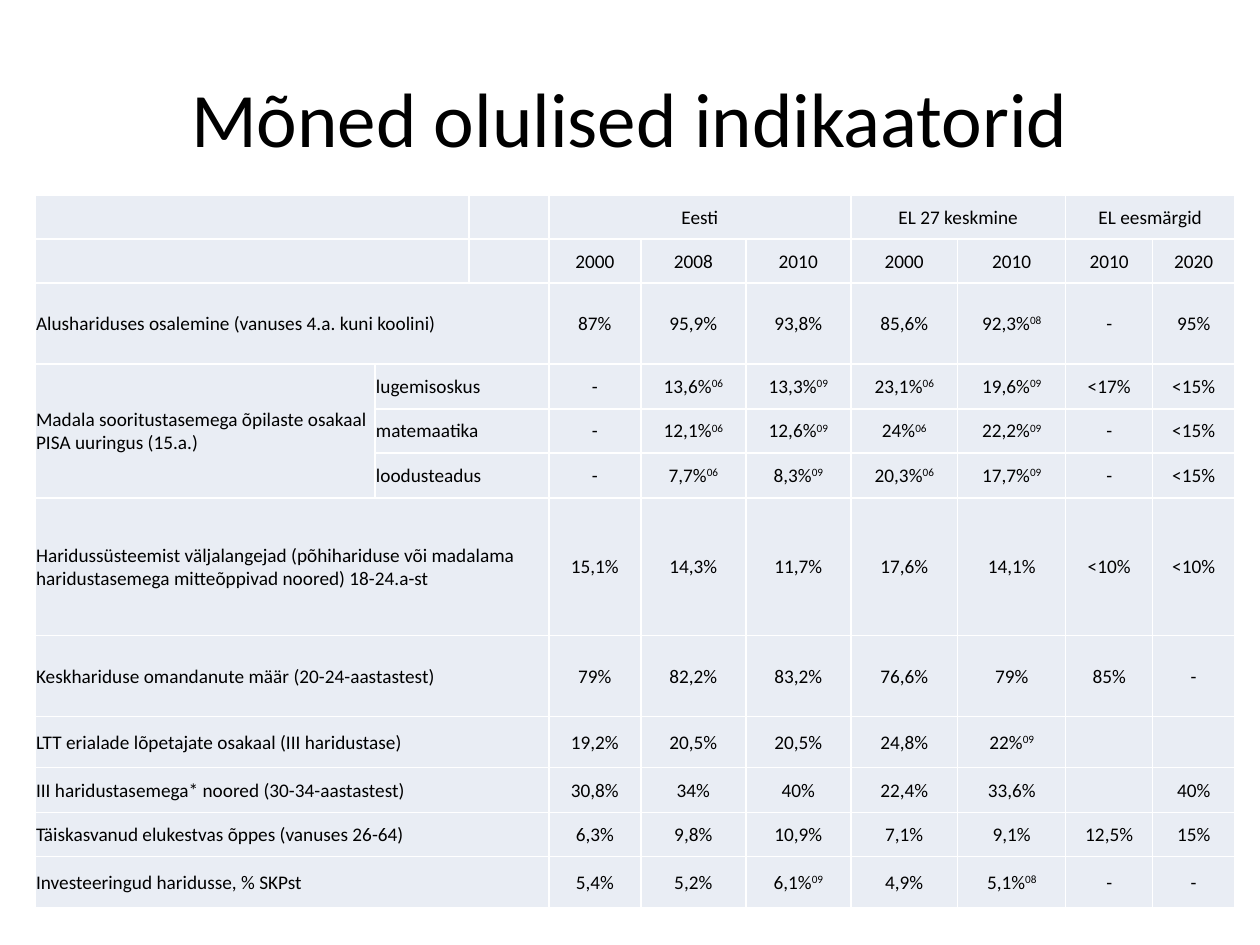
from dataclasses import dataclass

from lxml.etree import SubElement
from pptx import Presentation
from pptx.dml.color import RGBColor
from pptx.enum.text import MSO_ANCHOR, PP_ALIGN
from pptx.oxml.ns import qn
from pptx.util import Emu, Pt


@dataclass(frozen=True)
class Theme:
    face: str = "Calibri"
    ink: str = "000000"
    cell: str = "E9EDF4"
    rule: str = "FFFFFF"
    title: int = 44
    body: int = 11
    edge: int = 1


THEME = Theme()
SCALE = 914400 / 126
COLS = [340, 94, 80, 92, 105, 105, 107, 108, 87, 82]
ROWS = [44, 44, 81, 45, 44, 45, 138, 81, 51, 45, 44, 51]
FLAGS = {"first_row": False, "horz_banding": False}
INSETS = ["margin_left", "margin_right", "margin_top"]

HEADS = {3: "Eesti", 6: "EL 27 keskmine", 8: "EL eesmärgid"}
PISA = "Madala sooritustasemega õpilaste osakaal PISA uuringus (15.a.)"
FIRST = 3
DATA = [
    ("", "2000|2008|2010|2000|2010|2010|2020"),
    ("Alushariduses osalemine (vanuses 4.a. kuni koolini)",
     "87%|95,9%|93,8%|85,6%|92,3%^08|-|95%"),
    ("lugemisoskus", "-|13,6%^06|13,3%^09|23,1%^06|19,6%^09|<17%|<15%"),
    ("matemaatika", "-|12,1%^06|12,6%^09|24%^06|22,2%^09|-|<15%"),
    ("loodusteadus", "-|7,7%^06|8,3%^09|20,3%^06|17,7%^09|-|<15%"),
    ("Haridussüsteemist väljalangejad (põhihariduse või madalama "
     "haridustasemega mitteõppivad noored) 18-24.a-st",
     "15,1%|14,3%|11,7%|17,6%|14,1%|<10%|<10%"),
    ("Keskhariduse omandanute määr (20-24-aastastest)",
     "79%|82,2%|83,2%|76,6%|79%|85%|-"),
    ("LTT erialade lõpetajate osakaal (III haridustase)",
     "19,2%|20,5%|20,5%|24,8%|22%^09||"),
    ("III haridustasemega* noored (30-34-aastastest)",
     "30,8%|34%|40%|22,4%|33,6%||40%"),
    ("Täiskasvanud elukestvas õppes (vanuses 26-64)",
     "6,3%|9,8%|10,9%|7,1%|9,1%|12,5%|15%"),
    ("Investeeringud haridusse, % SKPst",
     "5,4%|5,2%|6,1%^09|4,9%|5,1%^08|-|-"),
]
SUBS = range(3, 6)
WIDE = [2, *range(6, 12)]
SPANS = [
    (0, 0, 0, 1), (1, 0, 1, 1),
    (0, 3, 0, 5), (0, 6, 0, 7), (0, 8, 0, 9),
    (3, 0, 5, 0),
    *[(row, 1, row, 2) for row in SUBS],
    *[(row, 0, row, 2) for row in WIDE],
]


def px(size):
    return Emu(round(size * SCALE))


def apply(thing, values):
    for name, value in values.items():
        setattr(thing, name, value)


def write(frame, text, size, align):
    para = frame.paragraphs[0]
    para.alignment = align
    main, _, note = text.partition("^")
    for part, base in ((main, None), (note, "30000")):
        if not part:
            continue
        run = para.add_run()
        run.text = part
        apply(run.font, {"name": THEME.face, "size": Pt(size), "bold": False})
        run.font.color.rgb = RGBColor.from_string(THEME.ink)
        if base:
            run.font._element.set("baseline", base)


def add_title(slide, text):
    box = slide.shapes.add_textbox(px(63), px(38), px(1134), px(157))
    frame = box.text_frame
    apply(frame, {"word_wrap": True, "vertical_anchor": MSO_ANCHOR.MIDDLE})
    write(frame, text, THEME.title, PP_ALIGN.CENTER)


def dress(cell):
    apply(cell, {name: px(1) for name in INSETS})
    apply(cell, {"margin_bottom": 0, "vertical_anchor": MSO_ANCHOR.MIDDLE})
    props = cell._tc.get_or_add_tcPr()
    for side in ("lnL", "lnR", "lnT", "lnB"):
        line = SubElement(props, qn(f"a:{side}"), w=str(Pt(THEME.edge)))
        fill = SubElement(line, qn("a:solidFill"))
        SubElement(fill, qn("a:srgbClr"), val=THEME.rule)
    cell.fill.solid()
    cell.fill.fore_color.rgb = RGBColor.from_string(THEME.cell)


def add_grid(slide):
    frame = slide.shapes.add_table(
        len(ROWS), len(COLS), px(35), px(195), px(sum(COLS)), px(sum(ROWS)))
    table = frame.table
    apply(table, FLAGS)
    for col, width in zip(table.columns, COLS):
        col.width = px(width)
    for row, height in zip(table.rows, ROWS):
        row.height = px(height)
    for cell in table.iter_cells():
        dress(cell)
    for top, left, end, right in SPANS:
        table.cell(top, left).merge(table.cell(end, right))
    return table


def fill_grid(table):
    def put(row, col, text, align=PP_ALIGN.CENTER):
        write(table.cell(row, col).text_frame, text, THEME.body, align)

    for col, text in HEADS.items():
        put(0, col, text)
    put(SUBS[0], 0, PISA, PP_ALIGN.LEFT)
    for row, (label, values) in enumerate(DATA, 1):
        put(row, 1 if row in SUBS else 0, label, PP_ALIGN.LEFT)
        for col, text in enumerate(values.split("|"), FIRST):
            put(row, col, text)


def main():
    deck = Presentation()
    apply(deck, {"slide_width": px(1260), "slide_height": px(945)})
    slide = deck.slides.add_slide(deck.slide_layouts[6])
    add_title(slide, "Mõned olulised indikaatorid")
    fill_grid(add_grid(slide))
    deck.save("out.pptx")


if __name__ == "__main__":
    main()
